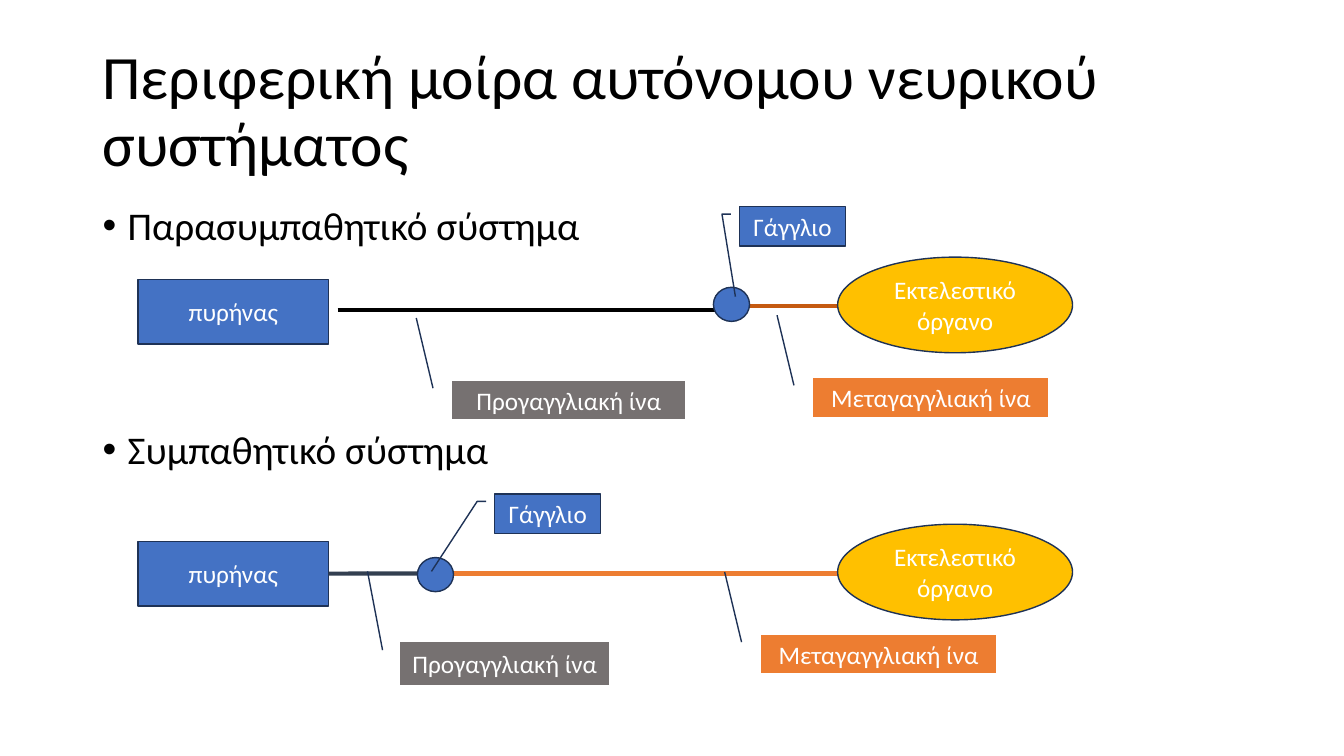
from lxml import etree
from pptx import Presentation
from pptx import util as u
from pptx.dml.color import RGBColor
from pptx.enum import shapes, text
from pptx.oxml.ns import qn

COLORS = {
    "black": "000000", "white": "FFFFFF", "blue": "4472C4", "navy": "1E3256",
    "slate": "333F50", "gray": "767171", "orange": "ED7D31", "rust": "C55A11",
    "gold": "FFC000",
}
SHAPE = shapes.MSO_SHAPE
FIBRE_LEADER = (0.188, -0.083, -1.636, -0.155)
PATHWAYS = [
    dict(nucleus_y=7.04, ganglion=(17.98, 7.24), organ_y=6.48,
         pre=(8.51, 18.19, 7.82, "black"), post=(18.19, 21.11, 7.72, "rust"),
         pre_label=(11.4, 9.6, 5.87, 0.97), post_label=(20.5, 9.53, 5.92, 0.97),
         ganglion_label=(18.64, 5.21), leader_end=(2.289, -0.04), joined=False),
    dict(nucleus_y=13.64, ganglion=(10.52, 14.05), organ_y=13.21,
         pre=(8.28, 10.54, 14.45, "slate"), post=(11.4, 21.11, 14.45, "orange"),
         pre_label=(10.08, 16.18, 5.28, 1.09), post_label=(19.18, 16, 5.92, 0.97),
         ganglion_label=(12.47, 12.45), leader_end=(1.969, -0.598), joined=True),
]


def rgb(name):
    """Return the named colour."""
    return RGBColor.from_string(COLORS[name])


def write(p, words, size=18, color="white", align=text.PP_ALIGN.CENTER,
          spacing=None, before=0):
    """Put one formatted run in a paragraph."""
    p.alignment = align
    p.space_before = u.Pt(before)
    if spacing:
        p.line_spacing = spacing
    r = p.add_run()
    r.text = words
    r.font.name = "Calibri"
    r.font.size = u.Pt(size)
    r.font.color.rgb = rgb(color)


def place(sp, left, top, width, height):
    """Move a placeholder and return its text frame."""
    sp.left, sp.top, sp.width, sp.height = map(u.Cm, (left, top, width, height))
    tf = sp.text_frame
    tf.word_wrap = True
    tf.auto_size = text.MSO_AUTO_SIZE.NONE
    return tf


def add_bullet(p):
    """Give a paragraph a hanging round bullet."""
    pPr = p._p.get_or_add_pPr()
    pPr.set("marL", str(u.Cm(0.635)))
    pPr.set("indent", str(-u.Cm(0.635)))
    etree.SubElement(pPr, qn("a:buFont")).set("typeface", "Arial")
    etree.SubElement(pPr, qn("a:buChar")).set("char", "•")


def add_box(s, kind, box, fill, words="", adjustments=()):
    """Add a filled shape with an optional centred label."""
    sp = s.shapes.add_shape(kind, *map(u.Cm, box))
    sp.shadow.inherit = False
    sp.fill.solid()
    sp.fill.fore_color.rgb = rgb(fill)
    sp.line.color.rgb = rgb("navy")
    sp.line.width = u.Pt(1)
    for i, value in enumerate(adjustments):
        sp.adjustments[i] = value
    if words:
        tf = sp.text_frame
        tf.word_wrap = True
        tf.vertical_anchor = text.MSO_ANCHOR.MIDDLE
        write(tf.paragraphs[0], words)
    return sp


def add_fibre(s, x1, x2, y, color):
    """Add a thick horizontal nerve fibre."""
    line = s.shapes.add_connector(shapes.MSO_CONNECTOR.STRAIGHT,
                                  u.Cm(x1), u.Cm(y), u.Cm(x2), u.Cm(y))
    line.line.color.rgb = rgb(color)
    line.line.width = u.Pt(3)
    etree.SubElement(line._element.spPr, qn("a:effectLst"))
    return line


def add_pathway(s, nucleus_y, ganglion, organ_y, pre, post, pre_label,
                post_label, ganglion_label, leader_end, joined):
    """Draw one pathway from nucleus to effector organ."""
    nucleus = add_box(s, SHAPE.RECTANGLE, (3.48, nucleus_y, 4.8, 1.63),
                      "blue", "πυρήνας")
    fibre = add_fibre(s, *pre)
    if joined:
        fibre.begin_connect(nucleus, 3)
    add_fibre(s, *post)
    add_box(s, SHAPE.OVAL, (*ganglion, 0.91, 0.86), "blue")
    add_box(s, SHAPE.OVAL, (21.11, organ_y, 5.92, 2.41), "gold",
            "Εκτελεστικό όργανο")
    for box, fill, words in ((pre_label, "gray", "Προγαγγλιακή ίνα"),
                             (post_label, "orange", "Μεταγαγγλιακή ίνα")):
        add_box(s, SHAPE.LINE_CALLOUT_1_NO_BORDER, box, fill, words, FIBRE_LEADER)
    add_box(s, SHAPE.LINE_CALLOUT_2, (*ganglion_label, 2.67, 0.99), "blue",
            "Γάγγλιο", (0.188, -0.083, 0.188, -0.167, *leader_end))


def main():
    """Build and save the slide."""
    prs = Presentation()
    prs.slide_width, prs.slide_height = u.Cm(33.87), u.Cm(19.05)
    s = prs.slides.add_slide(prs.slide_layouts[1])

    tf = place(s.shapes.title, 2.33, 1.01, 29.21, 3.68)
    tf.vertical_anchor = text.MSO_ANCHOR.MIDDLE
    write(tf.paragraphs[0], "Περιφερική μοίρα αυτόνομου νευρικού συστήματος",
          size=44, color="black", align=text.PP_ALIGN.LEFT, spacing=0.9)

    tf = place(s.placeholders[1], 2.33, 5.07, 29.21, 12.09)
    for p, words, before in (
            (tf.paragraphs[0], "Παρασυμπαθητικό σύστημα", 0),
            (tf.add_paragraph(), "Συμπαθητικό σύστημα", 130)):
        add_bullet(p)
        write(p, words, size=28, color="black", align=text.PP_ALIGN.LEFT,
              spacing=0.9, before=before)

    for pathway in PATHWAYS:
        add_pathway(s, **pathway)
    prs.save("out.pptx")


if __name__ == "__main__":
    main()
